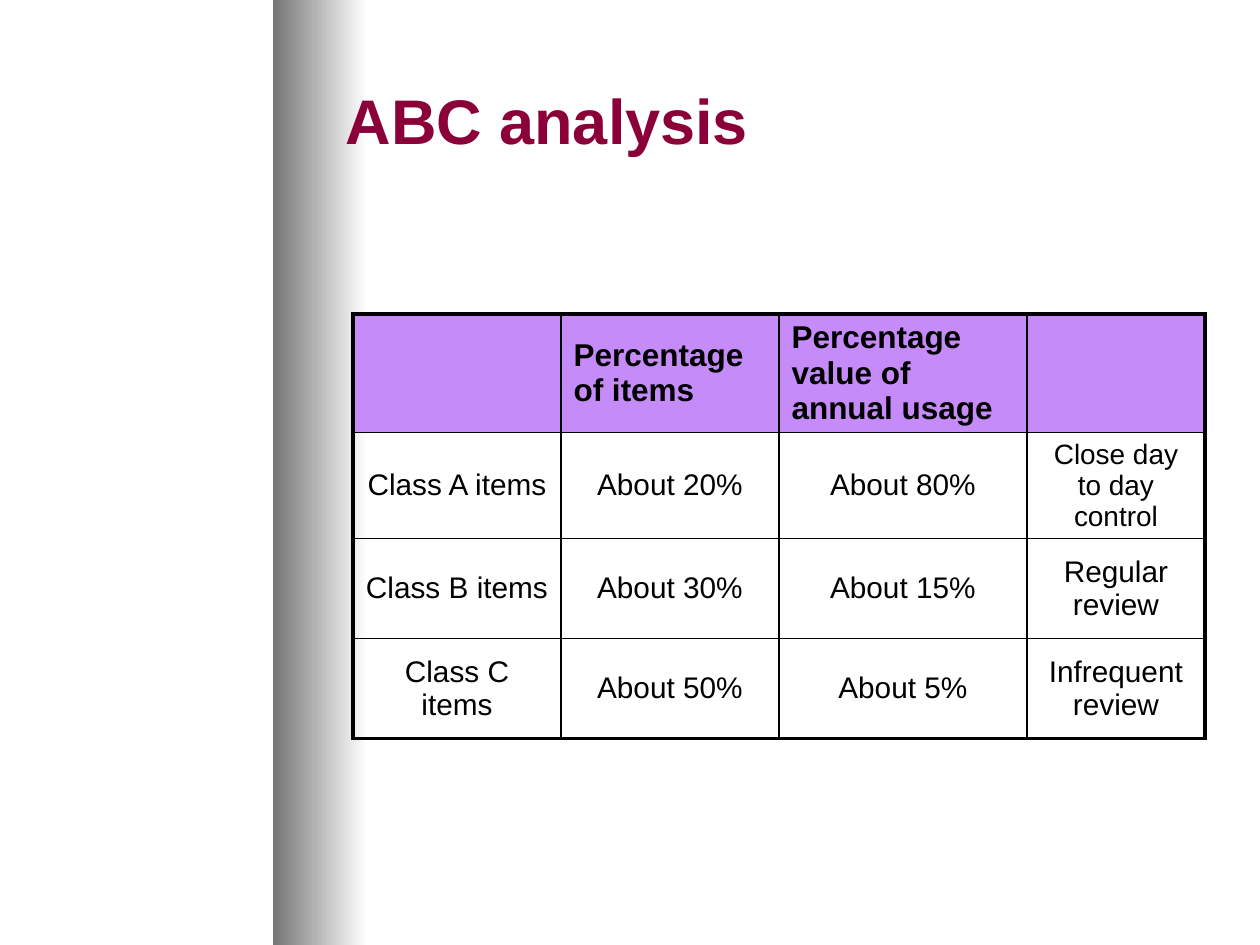
from dataclasses import dataclass

from lxml.etree import SubElement
from pptx import Presentation
from pptx.dml.color import RGBColor
from pptx.enum.shapes import MSO_SHAPE
from pptx.enum.text import MSO_ANCHOR, MSO_AUTO_SIZE, PP_ALIGN
from pptx.oxml.ns import qn
from pptx.util import Emu, Pt

EMU_PER_PX = 914400 / 126


@dataclass(frozen=True)
class Theme:
    font: str = "Arial"
    title: str = "8C0039"
    text: str = "000000"
    border: str = "000000"
    header: str = "C58BF9"
    band_dark: str = "767676"
    band_light: str = "FFFFFF"
    title_size: int = 36
    header_size: int = 18
    body_size: int = 17
    small_size: int = 16
    outer_line: float = 2.25
    inner_line: float = 1


@dataclass(frozen=True)
class Box:
    left: int
    top: int
    width: int
    height: int

    def emu(self) -> tuple:
        return tuple(px(v) for v in (self.left, self.top, self.width, self.height))


@dataclass(frozen=True)
class ItemClass:
    name: str
    items: str
    usage: str
    control: str
    control_size: int

    def cells(self) -> list:
        size = THEME.body_size
        return [(self.name, size), (self.items, size), (self.usage, size),
                (self.control, self.control_size)]


THEME = Theme()
HEADERS = ["", "Percentage of items", "Percentage value of annual usage", ""]
CLASSES = [
    ItemClass("Class A items", "About 20%", "About 80%",
              "Close day to day control", THEME.small_size),
    ItemClass("Class B items", "About 30%", "About 15%",
              "Regular review", THEME.body_size),
    ItemClass("Class C items", "About 50%", "About 5%",
              "Infrequent review", THEME.body_size),
]
COL_WIDTHS = [208, 218, 248, 178]
ROW_HEIGHTS = [118, 106, 100, 100]


def px(value: int) -> Emu:
    return Emu(round(value * EMU_PER_PX))


def write(tf, text: str, *, size: int, color: str = THEME.text,
          bold: bool = False, align=PP_ALIGN.LEFT) -> None:
    p = tf.paragraphs[0]
    p.alignment = align
    r = p.add_run()
    r.text = text
    r.font.name = THEME.font
    r.font.size = Pt(size)
    r.font.bold = bold
    r.font.color.rgb = RGBColor.from_string(color)


def add_band(s, box: Box) -> None:
    sp = s.shapes.add_shape(MSO_SHAPE.RECTANGLE, *box.emu())
    sp.shadow.inherit = False
    sp.line.fill.background()
    sp.fill.gradient()
    sp.fill.gradient_angle = 0
    colors = (THEME.band_dark, THEME.band_light)
    for position, (stop, color) in enumerate(zip(sp.fill.gradient_stops, colors)):
        stop.position = position
        stop.color.rgb = RGBColor.from_string(color)
    # Behind the title
    s.shapes._spTree.insert(2, sp._element)


def set_title(s, text: str, box: Box) -> None:
    sp = s.shapes.title
    sp.left, sp.top, sp.width, sp.height = box.emu()
    tf = sp.text_frame
    tf.word_wrap = True
    tf.auto_size = MSO_AUTO_SIZE.NONE
    tf.vertical_anchor = MSO_ANCHOR.MIDDLE
    write(tf, text, size=THEME.title_size, color=THEME.title, bold=True)


def set_borders(cell, row: int, col: int) -> None:
    outer = {"L": col == 0, "R": col == len(COL_WIDTHS) - 1,
             "T": row == 0, "B": row == len(ROW_HEIGHTS) - 1}
    tc_pr = cell._tc.get_or_add_tcPr()
    for side, is_outer in outer.items():
        width = THEME.outer_line if is_outer else THEME.inner_line
        ln = SubElement(tc_pr, qn(f"a:ln{side}"), w=str(Pt(width)))
        fill = SubElement(ln, qn("a:solidFill"))
        SubElement(fill, qn("a:srgbClr"), val=THEME.border)


def add_class_table(s, left: int, top: int) -> None:
    box = Box(left, top, sum(COL_WIDTHS), sum(ROW_HEIGHTS))
    table = s.shapes.add_table(len(ROW_HEIGHTS), len(COL_WIDTHS), *box.emu()).table
    table.first_row = table.horz_banding = False
    for column, width in zip(table.columns, COL_WIDTHS):
        column.width = px(width)
    for row, height in zip(table.rows, ROW_HEIGHTS):
        row.height = px(height)

    rows = [[(text, THEME.header_size) for text in HEADERS]]
    rows += [item.cells() for item in CLASSES]
    for i, entries in enumerate(rows):
        is_header = i == 0
        for j, (text, size) in enumerate(entries):
            cell = table.cell(i, j)
            cell.vertical_anchor = MSO_ANCHOR.MIDDLE
            set_borders(cell, i, j)
            if is_header:
                cell.fill.solid()
                cell.fill.fore_color.rgb = RGBColor.from_string(THEME.header)
            else:
                cell.fill.background()
            if text:
                write(cell.text_frame, text, size=size, bold=is_header,
                      align=PP_ALIGN.LEFT if is_header else PP_ALIGN.CENTER)


def main() -> None:
    prs = Presentation()
    prs.slide_width, prs.slide_height = px(1260), px(945)
    s = prs.slides.add_slide(prs.slide_layouts[5])

    # Shaded band and title
    add_band(s, Box(273, 0, 94, 945))
    set_title(s, "ABC analysis", Box(333, 35, 882, 168))

    # Table of item classes
    add_class_table(s, 353, 314)

    prs.save("out.pptx")


if __name__ == "__main__":
    main()
